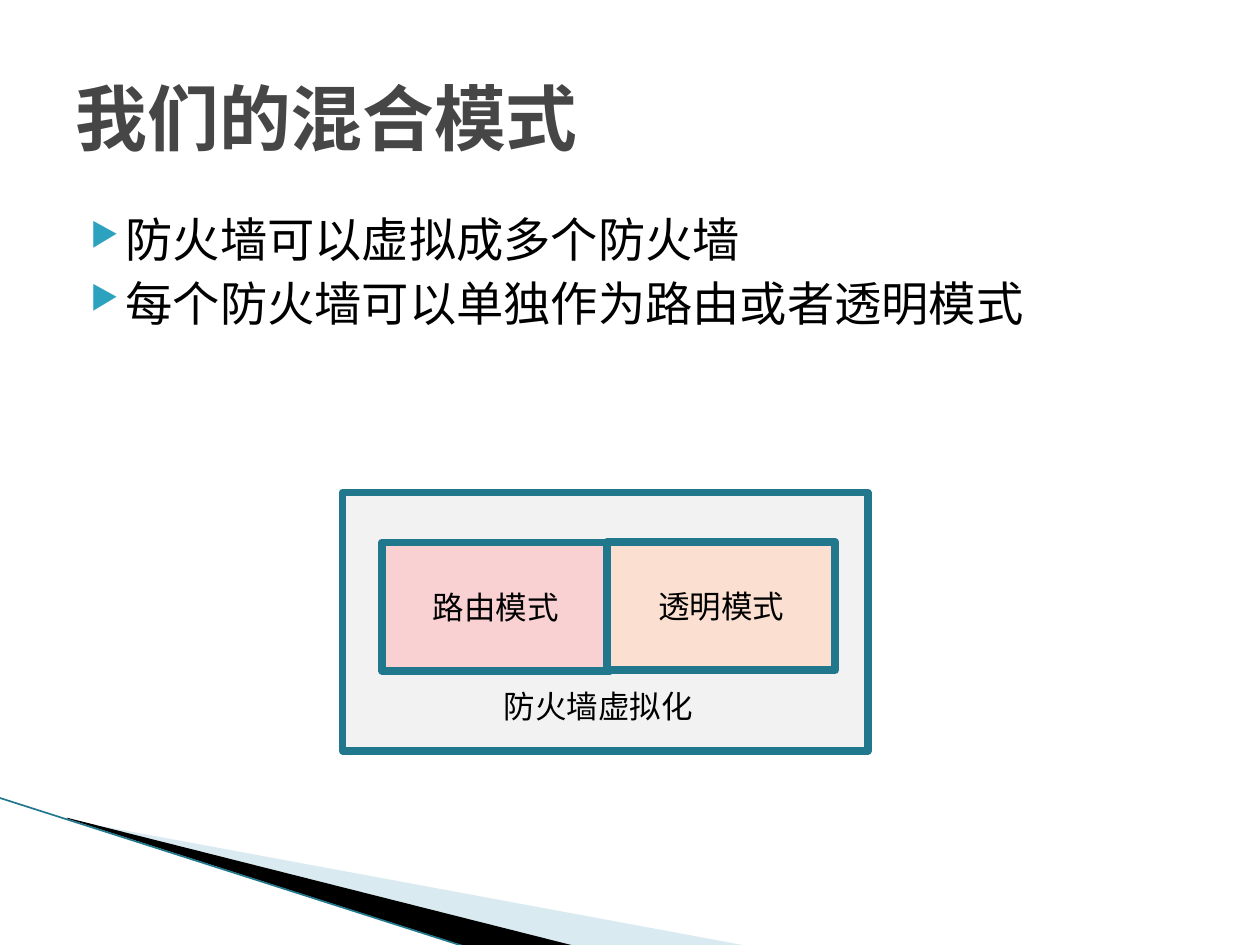
"""Build a slide on mixed firewall modes with a nested box diagram."""
from typing import NamedTuple

from lxml.etree import SubElement
from pptx import Presentation
from pptx.dml.color import RGBColor
from pptx.enum.shapes import MSO_CONNECTOR, MSO_SHAPE
from pptx.enum.text import MSO_ANCHOR, PP_ALIGN
from pptx.oxml.ns import qn
from pptx.util import Pt

FONT = "DejaVu Sans Mono"
BLACK = RGBColor(0x00, 0x00, 0x00)
TITLE_GREY = RGBColor(0x46, 0x46, 0x46)
TEAL = RGBColor(0x21, 0x78, 0x8D)
BULLET_BLUE = RGBColor(0x2D, 0xA2, 0xBF)
PALE_BLUE = RGBColor(0xA0, 0xCB, 0xDC)
PANEL_GREY = RGBColor(0xF2, 0xF2, 0xF2)
PINK = RGBColor(0xF9, 0xD1, 0xD3)
PEACH = RGBColor(0xFB, 0xE0, 0xD1)


class Box(NamedTuple):
    left: float
    top: float
    width: float
    height: float
    fill: RGBColor
    label: str = ""


class Wedge(NamedTuple):
    points: tuple
    fill: RGBColor
    opacity: int = 100


WEDGES = (
    Wedge(((39.6, 468.7), (428.4, 540.7), (328.3, 540.7), (39.6, 468)), PALE_BLUE, 40),
    Wedge(((38.2, 467.3), (329, 540.7), (267.8, 541.4), (38.9, 468)), BLACK),
)
BOXES = (
    Box(195.8, 281.5, 300.2, 147.6, PANEL_GREY),
    Box(218.2, 309.9, 130.3, 73.4, PINK, "路由模式"),
    Box(347, 309.6, 130.3, 73.4, PEACH, "透明模式"),
)
BULLETS = ("防火墙可以虚拟成多个防火墙", "每个防火墙可以单独作为路由或者透明模式")


def add_run(paragraph, text: str, size: float, color=BLACK, bold=False) -> None:
    run = paragraph.add_run()
    run.text = text
    run.font.name = FONT
    run.font.size = Pt(size)
    run.font.bold = bold
    run.font.color.rgb = color


def add_wedge(slide, wedge: Wedge) -> None:
    start, *rest = [(Pt(x), Pt(y)) for x, y in wedge.points]
    builder = slide.shapes.build_freeform(*start)
    builder.add_line_segments(rest)
    shape = builder.convert_to_shape()
    shape.shadow.inherit = False
    shape.fill.solid()
    shape.fill.fore_color.rgb = wedge.fill
    shape.line.fill.background()
    if wedge.opacity < 100:
        color = shape.fill._xPr.find(qn("a:solidFill"))[0]
        SubElement(color, qn("a:alpha"), val=str(wedge.opacity * 1000))


def add_edge(slide) -> None:
    edge = slide.shapes.add_connector(
        MSO_CONNECTOR.STRAIGHT, Pt(-0.7), Pt(455.8), Pt(267.1), Pt(541.4))
    edge.line.color.rgb = TEAL
    edge.line.width = Pt(0.95)
    SubElement(edge._element.spPr, qn("a:effectLst"))


def add_box(slide, box: Box) -> None:
    shape = slide.shapes.add_shape(
        MSO_SHAPE.RECTANGLE, Pt(box.left), Pt(box.top), Pt(box.width), Pt(box.height))
    shape.shadow.inherit = False
    shape.fill.solid()
    shape.fill.fore_color.rgb = box.fill
    shape.line.color.rgb = TEAL
    shape.line.width = Pt(4.33)
    SubElement(shape.line._get_or_add_ln(), qn("a:round"))
    if box.label:
        shape.text_frame.vertical_anchor = MSO_ANCHOR.MIDDLE
        paragraph = shape.text_frame.paragraphs[0]
        paragraph.alignment = PP_ALIGN.CENTER
        add_run(paragraph, box.label, 18)


def add_text_frame(slide, left: float, top: float, width: float, height: float):
    text_box = slide.shapes.add_textbox(Pt(left), Pt(top), Pt(width), Pt(height))
    text_box.text_frame.word_wrap = True
    return text_box.text_frame


def add_bullets(slide) -> None:
    frame = add_text_frame(slide, 36, 116.6, 648, 356.4)
    for index, text in enumerate(BULLETS):
        paragraph = frame.add_paragraph() if index else frame.paragraphs[0]
        paragraph.space_before = Pt(4 if index else 0)
        properties = paragraph._p.get_or_add_pPr()
        properties.set("marL", str(Pt(28.8)))
        properties.set("indent", str(Pt(-20.2)))
        color = SubElement(properties, qn("a:buClr"))
        SubElement(color, qn("a:srgbClr"), val=str(BULLET_BLUE))
        SubElement(properties, qn("a:buSzPct"), val="68000")
        SubElement(properties, qn("a:buChar"), char="▶")
        add_run(paragraph, text, 27)


def add_title(slide) -> None:
    title = slide.shapes.title
    title.left, title.top, title.width, title.height = Pt(36), Pt(21.6), Pt(648), Pt(90)
    title.text_frame.vertical_anchor = MSO_ANCHOR.MIDDLE
    paragraph = title.text_frame.paragraphs[0]
    paragraph.alignment = PP_ALIGN.LEFT
    add_run(paragraph, "我们的混合模式", 41, TITLE_GREY, True)


def main() -> None:
    presentation = Presentation()
    presentation.slide_width, presentation.slide_height = Pt(720), Pt(540)
    slide = presentation.slides.add_slide(presentation.slide_layouts[5])
    add_title(slide)
    for wedge in WEDGES:
        add_wedge(slide, wedge)
    add_edge(slide)
    for box in BOXES:
        add_box(slide, box)
    add_bullets(slide)
    caption = add_text_frame(slide, 280.8, 388.8, 153.4, 28.8)
    add_run(caption.paragraphs[0], "防火墙虚拟化", 18)
    presentation.save("out.pptx")


if __name__ == "__main__":
    main()
